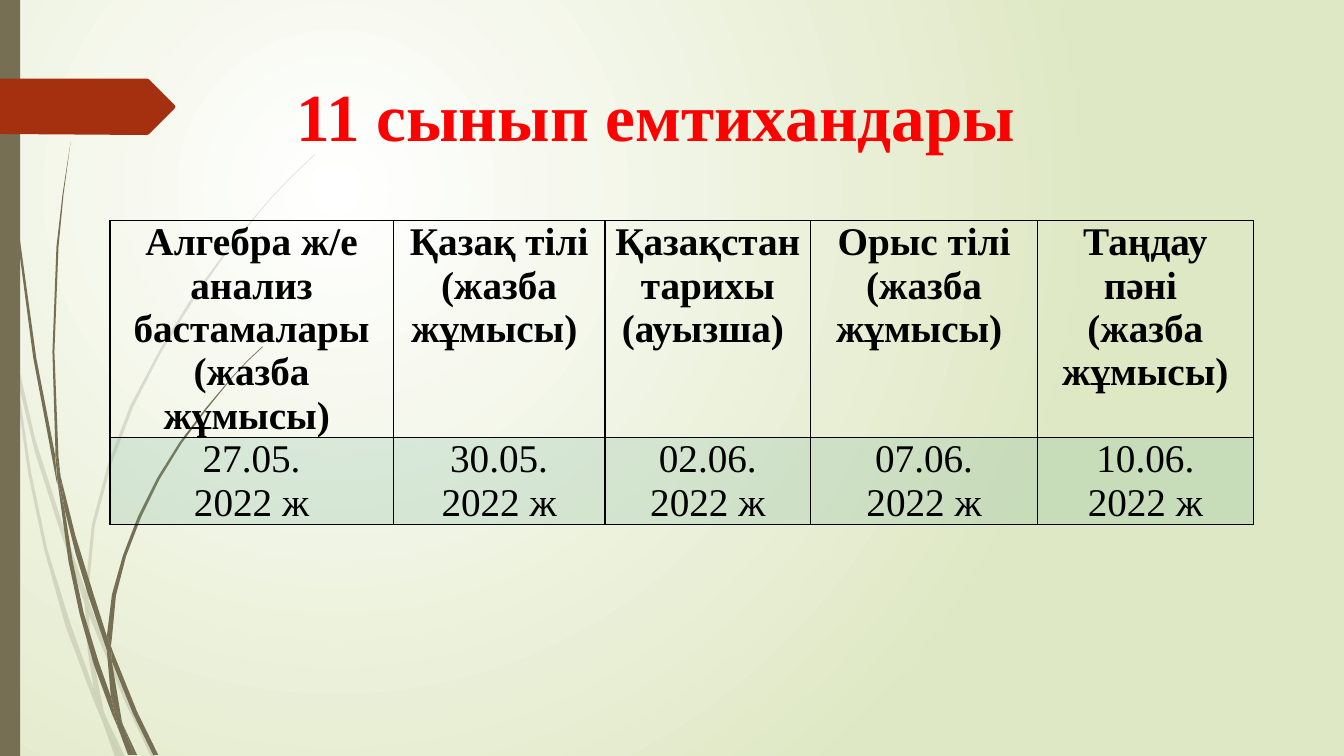
from lxml.etree import SubElement
from pptx import Presentation
from pptx.dml.color import RGBColor
from pptx.enum.shapes import MSO_SHAPE
from pptx.enum.text import MSO_ANCHOR, MSO_AUTO_SIZE, PP_ALIGN
from pptx.oxml.ns import qn
from pptx.util import Pt

PX = 9144
THEME = {
    "font": "Times New Roman",
    "title": RGBColor(0xFF, 0x00, 0x00),
    "text": RGBColor(0x00, 0x00, 0x00),
    "stem": RGBColor(0x76, 0x6F, 0x54),
    "tag": RGBColor(0xA5, 0x30, 0x10),
    "dates": RGBColor(0x6A, 0xAC, 0x91),
    "bg_inner": RGBColor(0xFF, 0xFF, 0xFF),
    "bg_outer": RGBColor(0xDF, 0xE8, 0xC4),
    "border": "000000",
    "title_size": Pt(48),
    "table_size": Pt(28),
}

LIGHT_GRASS = [
    [(11, 350), (9, 322), (0, 282), (0, 299), (10, 344)],
    [(58, 522), (84, 599), (85, 586), (62, 520), (35, 436), (14, 345), (17, 376), (35, 450)],
    [(92, 607), (88, 596), (88, 610), (123, 694), (150, 751), (155, 751), (127, 692)],
    [(119, 751), (124, 751), (105, 711)],
    [(93, 683), (70, 619), (47, 545), (31, 469), (17, 376), (11, 350), (28, 470),
     (44, 546), (65, 621), (92, 693), (101, 714), (99, 707)],
    [(84, 599), (87, 646), (93, 683), (96, 692), (105, 711), (103, 706), (91, 646),
     (88, 610), (88, 608)],
    [(88, 584), (94, 522), (110, 462), (132, 404), (160, 349), (193, 296), (229, 245),
     (268, 198), (290, 175), (312, 154), (312, 153), (289, 175), (268, 197), (228, 244),
     (191, 294), (158, 348), (129, 403), (107, 461), (91, 521), (85, 584), (85, 586), (88, 596)],
    [(101, 714), (114, 751), (119, 751)],
    [(88, 608), (88, 610), (88, 596), (85, 586), (84, 599)],
    [(96, 692), (93, 683), (99, 707), (101, 714), (119, 751), (105, 711)],
]
DARK_GRASS = [
    [(7, 110), (17, 233), (33, 355), (56, 477), (57, 481), (55, 457), (55, 453), (36, 355),
     (19, 232), (8, 109), (5, 48), (4, 0), (3, 0), (4, 48)],
    [(88, 592), (106, 645), (106, 633), (106, 631), (93, 590), (75, 532), (60, 472),
     (64, 505), (75, 549)],
    [(113, 649), (110, 641), (111, 656), (132, 708), (152, 749), (157, 749), (136, 706)],
    [(110, 691), (98, 657), (83, 608), (72, 556), (64, 505), (57, 477), (68, 557),
     (79, 609), (93, 659), (111, 708), (117, 722), (116, 717)],
    [(60, 472), (58, 453), (54, 349), (58, 245), (63, 193), (70, 141), (62, 193),
     (56, 245), (52, 349), (55, 449)],
    [(133, 749), (136, 749), (122, 719)],
    [(57, 477), (64, 505), (60, 472), (55, 449), (55, 453)],
    [(111, 633), (115, 591), (125, 552), (140, 513), (158, 476), (180, 440), (205, 406),
     (231, 374), (245, 359), (261, 344), (260, 344), (245, 358), (231, 373), (204, 405),
     (178, 439), (156, 474), (137, 512), (122, 551), (111, 590), (106, 631), (110, 641)],
    [(117, 722), (127, 749), (131, 749)],
    [(106, 645), (110, 691), (116, 706), (122, 719), (121, 716), (111, 656), (109, 651)],
    [(106, 645), (109, 651), (111, 656), (110, 641), (106, 631), (106, 633)],
    [(116, 706), (110, 691), (116, 717), (117, 722), (130, 749), (133, 749), (122, 719)],
]

COLUMNS = [281, 210, 204, 225, 214]
ROWS = [215, 86]
EXAMS = [
    (["Алгебра ж/е анализ бастамалары (жазба жұмысы) "], ["27.05.", "2022 ж"]),
    (["Қазақ тілі (жазба жұмысы) "], ["30.05.", "2022 ж"]),
    (["Қазақстан тарихы (ауызша) "], ["02.06.", "2022 ж"]),
    (["Орыс тілі (жазба жұмысы) "], ["07.06.", "2022 ж"]),
    (["Таңдау пәні ", "(жазба жұмысы)"], ["10.06.", "2022 ж"]),
]


def paint(fill, color, alpha=100):
    fill.solid()
    fill.fore_color.rgb = color
    if alpha < 100:
        clr = fill._xPr.find(qn("a:solidFill")).find(qn("a:srgbClr"))
        SubElement(clr, qn("a:alpha"), val=str(alpha * 1000))


prs = Presentation()
prs.slide_width = 1333 * PX
prs.slide_height = 750 * PX
s = prs.slides.add_slide(prs.slide_layouts[5])

bg = s.background.fill
bg.gradient()
for stop, key in zip(bg.gradient_stops, ("bg_inner", "bg_outer")):
    stop.color.rgb = THEME[key]
grad = s._element.find(".//" + qn("a:gradFill"))
for clr in grad.iter(qn("a:srgbClr")):
    for effect in list(clr):
        clr.remove(effect)
grad.remove(grad.find(qn("a:lin")))
circle = grad.makeelement(qn("a:path"), {"path": "circle"})
SubElement(circle, qn("a:fillToRect"), l="50000", t="50000", r="100000", b="100000")
grad.find(qn("a:gsLst")).addnext(circle)

for grass, alpha in ((LIGHT_GRASS, 20), (DARK_GRASS, 100)):
    group = s.shapes.add_group_shape()
    for blade in grass:
        builder = group.shapes.build_freeform(*blade[0], scale=PX)
        builder.add_line_segments(blade[1:], close=True)
        sp = builder.convert_to_shape()
        sp.shadow.inherit = False
        paint(sp.fill, THEME["stem"], alpha)
        sp.line.fill.background()

bar = s.shapes.add_shape(MSO_SHAPE.RECTANGLE, 0, 0, 20 * PX, 750 * PX)
builder = s.shapes.build_freeform(173, 108, scale=PX)
builder.add_line_segments(
    [(148, 133), (146, 134), (0, 133), (0, 78), (146, 78), (148, 79), (173, 104), (174, 106)],
    close=True,
)
tag = builder.convert_to_shape()
for sp, key in ((bar, "stem"), (tag, "tag")):
    sp.shadow.inherit = False
    paint(sp.fill, THEME[key])
    sp.line.fill.background()

title = s.shapes.title
title.left, title.top, title.width, title.height = (v * PX for v in (284, 68, 975, 91))
tf = title.text_frame
tf.word_wrap = True
tf.auto_size = MSO_AUTO_SIZE.NONE
tf.vertical_anchor = MSO_ANCHOR.BOTTOM
p = tf.paragraphs[0]
p.alignment = PP_ALIGN.LEFT
r = p.add_run()
r.text = "11 сынып емтихандары"
r.font.name = THEME["font"]
r.font.size = THEME["title_size"]
r.font.bold = True
r.font.color.rgb = THEME["title"]

table = s.shapes.add_table(
    len(ROWS), len(COLUMNS), 109 * PX, 219 * PX, sum(COLUMNS) * PX, sum(ROWS) * PX
).table
table.first_row = False
table.horz_banding = False
for row, height in zip(table.rows, ROWS):
    row.height = height * PX
for column, width in zip(table.columns, COLUMNS):
    column.width = width * PX

for col, exam in enumerate(EXAMS):
    for row, lines in enumerate(exam):
        cell = table.cell(row, col)
        cell.margin_left = cell.margin_right = 7 * PX
        cell.margin_top = cell.margin_bottom = 0
        tcPr = cell._tc.get_or_add_tcPr()
        for side in ("a:lnL", "a:lnR", "a:lnT", "a:lnB"):
            ln = SubElement(tcPr, qn(side), w=str(Pt(1)))
            SubElement(SubElement(ln, qn("a:solidFill")), qn("a:srgbClr"), val=THEME["border"])
        if row == 0:
            cell.fill.background()
        else:
            paint(cell.fill, THEME["dates"], 20)
        tf = cell.text_frame
        for i, line in enumerate(lines):
            p = tf.add_paragraph() if i else tf.paragraphs[0]
            p.alignment = PP_ALIGN.CENTER
            r = p.add_run()
            r.text = line
            r.font.name = THEME["font"]
            r.font.size = THEME["table_size"]
            r.font.bold = row == 0
            r.font.color.rgb = THEME["text"]

prs.save("out.pptx")
